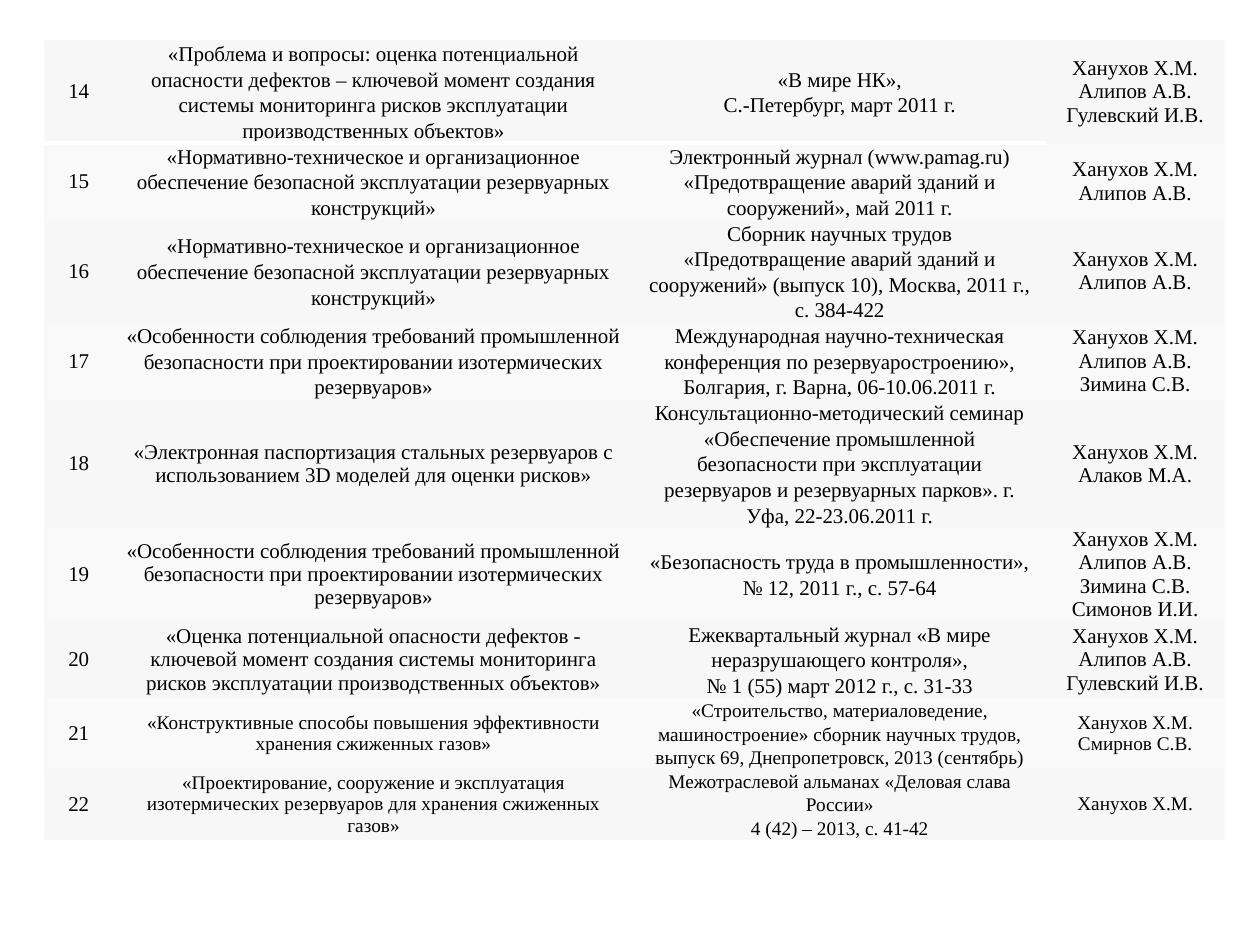
from lxml.etree import SubElement
from pptx import Presentation
from pptx.dml.color import RGBColor
from pptx.enum.text import MSO_ANCHOR, PP_ALIGN
from pptx.oxml.ns import qn
from pptx.util import Inches, Pt

FONT = "Times New Roman"
PLAIN_STYLE = "{2D5ABB26-0587-4C30-8999-92F81FD0307C}"
BAND_FILLS = ("F7F7F7", "F9F9F9")
EDGE = ("F9F9F9", 0.75)
HEADER_RULE = ("FFFFFF", 3)
COLUMN_WIDTHS = (0.55, 4.13, 3.27, 1.42)
ROW_HEIGHT = 0.47
FIRST_NUMBER = 14
SPACED_TITLES_UNTIL = 17
SMALL_TEXT_FROM = 21

# Title, where it appeared, authors; a line break starts a new paragraph.
PUBLICATIONS = [
    ("«Проблема и вопросы: оценка потенциальной опасности дефектов – ключевой момент "
     "создания системы мониторинга рисков эксплуатации производственных объектов»",
     "«В мире НК»,\nС.-Петербург, март 2011 г.",
     "Ханухов Х.М.\nАлипов А.В.\nГулевский И.В."),
    ("«Нормативно-техническое и организационное обеспечение безопасной эксплуатации "
     "резервуарных конструкций»",
     "Электронный журнал (www.pamag.ru) «Предотвращение аварий зданий и сооружений», "
     "май 2011 г.",
     "Ханухов Х.М.\nАлипов А.В."),
    ("«Нормативно-техническое и организационное обеспечение безопасной эксплуатации "
     "резервуарных конструкций»",
     "Сборник научных трудов «Предотвращение аварий зданий и сооружений» (выпуск 10), "
     "Москва, 2011 г., с. 384-422",
     "Ханухов Х.М.\nАлипов А.В."),
    ("«Особенности соблюдения требований промышленной безопасности при проектировании "
     "изотермических резервуаров»",
     "Международная научно-техническая конференция по резервуаростроению», Болгария, "
     "г. Варна, 06-10.06.2011 г.",
     "Ханухов Х.М.\nАлипов А.В.\nЗимина С.В."),
    ("«Электронная паспортизация стальных резервуаров с использованием 3D моделей "
     "для оценки рисков»",
     "Консультационно-методический семинар «Обеспечение промышленной безопасности при "
     "эксплуатации резервуаров и резервуарных парков». г. Уфа, 22-23.06.2011 г.",
     "Ханухов Х.М.\nАлаков М.А."),
    ("«Особенности соблюдения требований промышленной безопасности при проектировании "
     "изотермических резервуаров»",
     "«Безопасность труда в промышленности», № 12, 2011 г., с. 57-64",
     "Ханухов Х.М.\nАлипов А.В.\nЗимина С.В.\nСимонов И.И."),
    ("«Оценка потенциальной опасности дефектов - ключевой момент создания системы "
     "мониторинга рисков эксплуатации производственных объектов»",
     "Ежеквартальный журнал «В мире неразрушающего контроля»,\n"
     "№ 1 (55) март 2012 г., с. 31-33",
     "Ханухов Х.М.\nАлипов А.В.\nГулевский И.В."),
    ("«Конструктивные способы повышения эффективности хранения сжиженных газов»",
     "«Строительство, материаловедение, машиностроение» сборник научных трудов, "
     "выпуск 69, Днепропетровск, 2013 (сентябрь)",
     "Ханухов Х.М.\nСмирнов С.В."),
    ("«Проектирование, сооружение и эксплуатация изотермических резервуаров для "
     "хранения сжиженных газов»",
     "Межотраслевой альманах «Деловая слава России»\n4 (42) – 2013, с. 41-42",
     "Ханухов Х.М."),
]


def rgb(value):
    return RGBColor.from_string(value)


def add_border(cell, side, color, width):
    """Draw one side (L, R, T, B); call in that order and before the fill."""
    line = SubElement(cell._tc.get_or_add_tcPr(), qn(f"a:ln{side}"), w=str(Pt(width)))
    SubElement(SubElement(line, qn("a:solidFill")), qn("a:srgbClr"), val=color)


def add_cell_borders(cell, row, column):
    last_row, last_column = len(PUBLICATIONS) - 1, len(COLUMN_WIDTHS) - 1
    if column == 0:
        add_border(cell, "L", *EDGE)
    if column == last_column:
        add_border(cell, "R", *EDGE)
    if row == 0:
        add_border(cell, "T", *EDGE)
        if column < last_column:
            add_border(cell, "B", *HEADER_RULE)
    if row == last_row:
        add_border(cell, "B", *EDGE)


def fill_cell(cell, text, size, spacing, color):
    cell.fill.solid()
    cell.fill.fore_color.rgb = rgb(color)
    cell.vertical_anchor = MSO_ANCHOR.MIDDLE
    cell.margin_left = cell.margin_right = Inches(0.08)
    cell.margin_top = cell.margin_bottom = 0
    cell.text = text
    for paragraph in cell.text_frame.paragraphs:
        paragraph.alignment = PP_ALIGN.CENTER
        if spacing:
            paragraph.line_spacing = spacing
        paragraph.font.name = FONT
        paragraph.font.size = Pt(size)
        paragraph.font.color.rgb = rgb("000000")


def add_publication_table(slide):
    frame = slide.shapes.add_table(
        len(PUBLICATIONS), len(COLUMN_WIDTHS),
        Inches(0.35), Inches(0.32), Inches(9.37), Inches(6.72))
    table = frame.table
    table.first_row = table.horz_banding = False
    table._tbl.tblPr.find(qn("a:tableStyleId")).text = PLAIN_STYLE
    for column, width in zip(table.columns, COLUMN_WIDTHS):
        column.width = Inches(width)
    for row in table.rows:
        row.height = Inches(ROW_HEIGHT)
    frame.height = Inches(6.72)

    for row, publication in enumerate(PUBLICATIONS):
        number = FIRST_NUMBER + row
        text_size = 11 if number >= SMALL_TEXT_FROM else 12
        title_spacing = 1.1 if number <= SPACED_TITLES_UNTIL else None
        sizes = (12, text_size, text_size, text_size)
        spacings = (None, title_spacing, 1.1, None)
        contents = zip((str(number), *publication), sizes, spacings)
        for column, (text, size, spacing) in enumerate(contents):
            cell = table.cell(row, column)
            add_cell_borders(cell, row, column)
            fill_cell(cell, text, size, spacing, BAND_FILLS[row % 2])


def main():
    deck = Presentation()
    deck.slide_width, deck.slide_height = Inches(10), Inches(7.5)
    slide = deck.slides.add_slide(deck.slide_layouts[6])
    add_publication_table(slide)
    deck.save("out.pptx")


if __name__ == "__main__":
    main()
